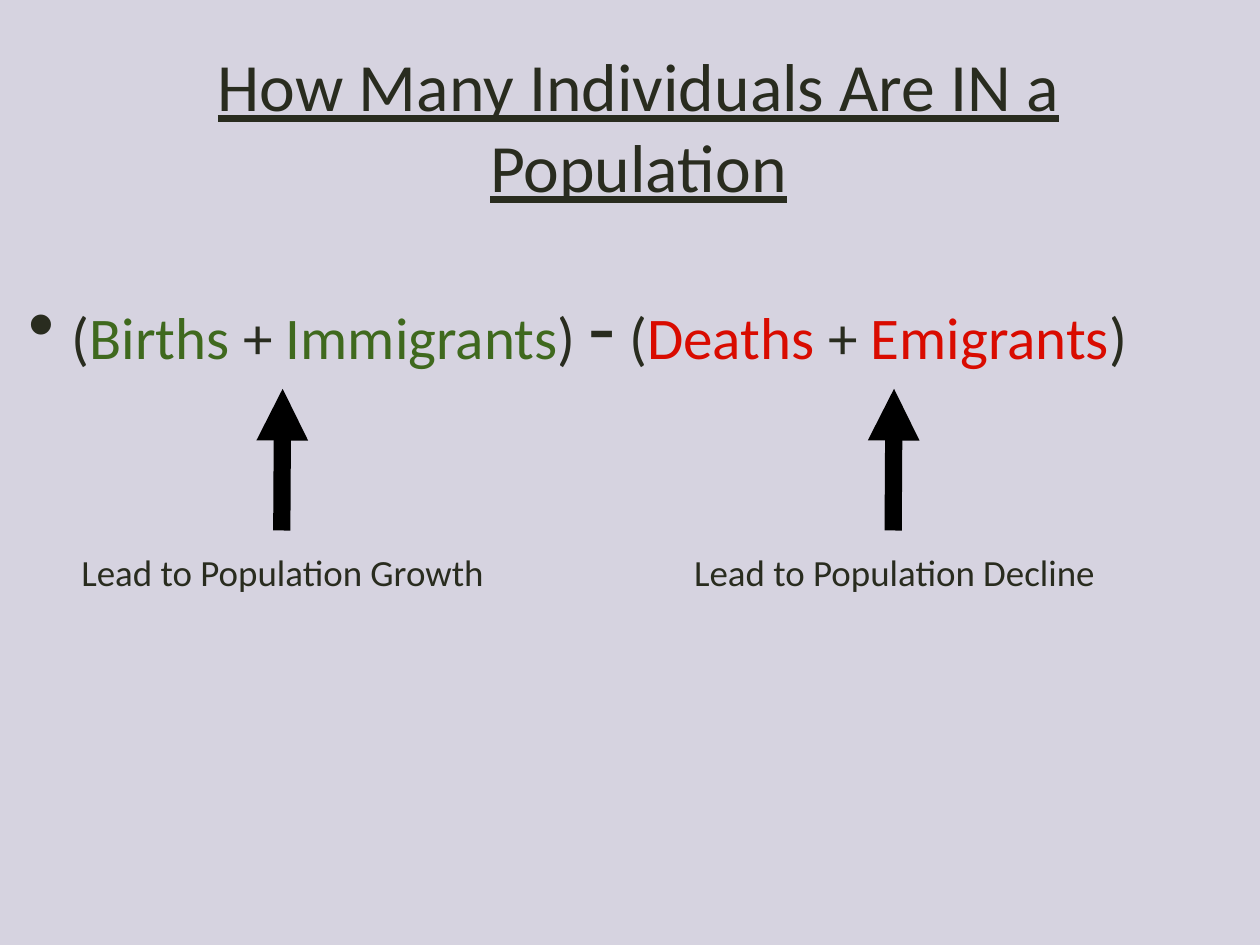
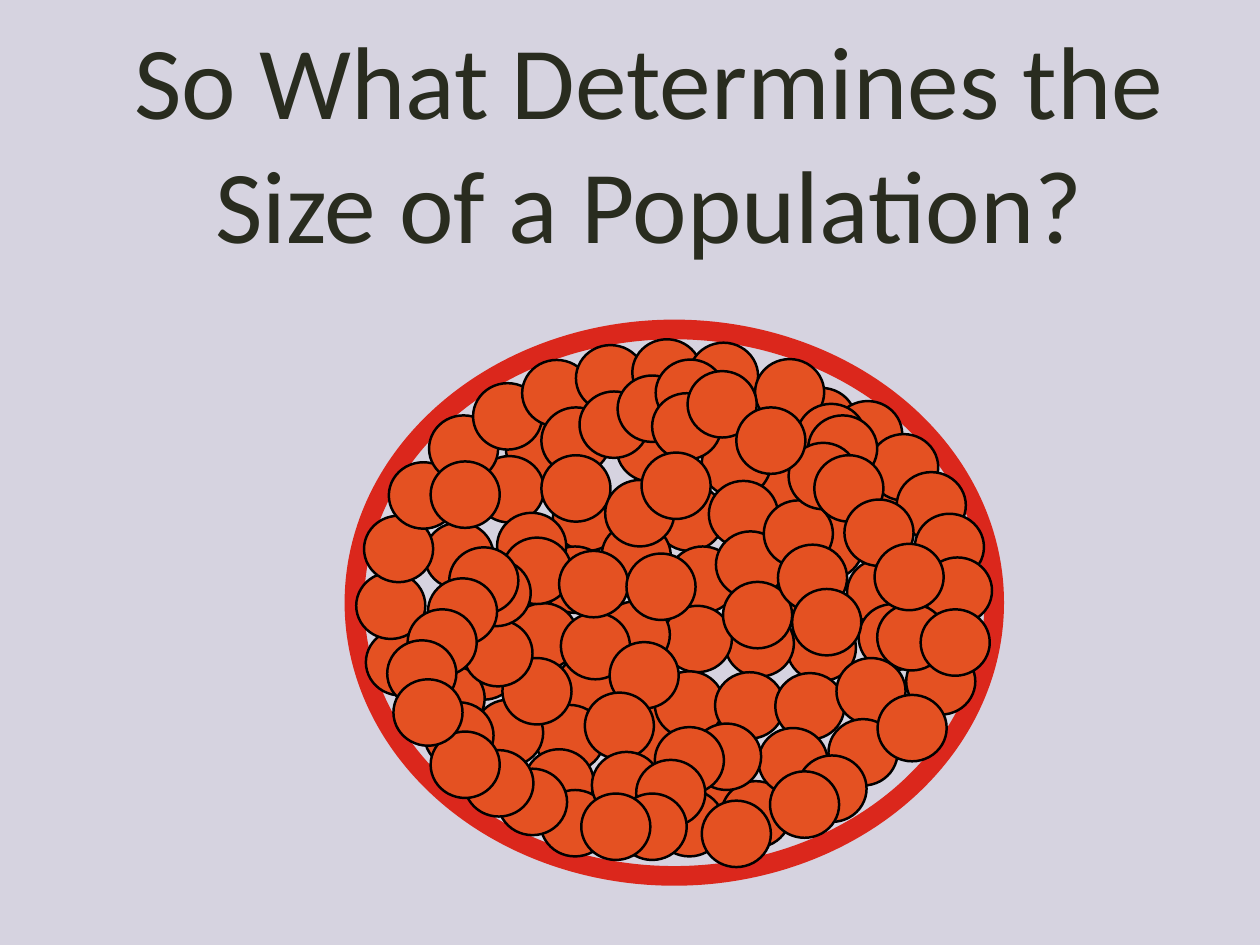
from math import cos, radians, sin
from typing import NamedTuple

from lxml import etree
from pptx import Presentation
from pptx.dml.color import RGBColor
from pptx.enum.shapes import MSO_CONNECTOR, MSO_SHAPE
from pptx.enum.text import MSO_ANCHOR, MSO_AUTO_SIZE, PP_ALIGN
from pptx.oxml.ns import qn
from pptx.util import Inches, Pt

STRAIGHT = MSO_CONNECTOR.STRAIGHT
OVAL = MSO_SHAPE.OVAL
MIDDLE, TOP = MSO_ANCHOR.MIDDLE, MSO_ANCHOR.TOP
NO_FIT, GROW = MSO_AUTO_SIZE.NONE, MSO_AUTO_SIZE.SHAPE_TO_FIT_TEXT
CENTER, LEFT = PP_ALIGN.CENTER, PP_ALIGN.LEFT

COLUMNS, ROWS = 14.22, 10.67  # one grid cell is one inch square
FONT = "Calibri"
COLORS = {
    "paper": "D6D3E0",
    "ink": "292C1F",
    "growth": "3F691E",
    "decline": "D90B00",
    "member": "E45122",
    "ring": "DB271C",
    "black": "000000",
}
TITLE_LAYOUT, LIST_LAYOUT = 5, 1

MEMBER_WIDTH, MEMBER_HEIGHT = 0.78, 0.75
RING_LEFT, RING_TOP, RING_WIDTH, RING_HEIGHT = 4, 3.72, 7.22, 6.17
RIM_RADIUS_ACROSS, RIM_RADIUS_DOWN = 3.2, 2.6


class Chain(NamedTuple):
    """Members in a straight line, each one step across and down from the last."""
    left: float
    top: float
    across: float = 0
    down: float = 0
    count: int = 1

    def places(self):
        for index in range(self.count):
            yield self.left + index * self.across, self.top + index * self.down


class RimArc(NamedTuple):
    """Members along the inside of the ring, in degrees clockwise from the right."""
    start: float
    step: float
    count: int

    def places(self):
        middle_left = RING_LEFT + (RING_WIDTH - MEMBER_WIDTH) / 2
        middle_top = RING_TOP + (RING_HEIGHT - MEMBER_HEIGHT) / 2
        for index in range(self.count):
            angle = radians(self.start + index * self.step)
            yield (middle_left + RIM_RADIUS_ACROSS * cos(angle),
                   middle_top + RIM_RADIUS_DOWN * sin(angle))


# Groups run from back to front.
BEHIND_RING = [
    Chain(7.39, 5.47, 1.08, -0.32, 2),
    Chain(7.92, 4.86, 0.96, -0.48, 2),
    Chain(9.56, 6.31, -1.01, -0.07, 3),
    Chain(6.24, 5.47),
    Chain(6.1, 6.17, 0.69, -0.27, 2),
    Chain(6.96, 4.69, -1.25, 0, 2),
    Chain(9.56, 5.15, -0.6, 0.64, 2),
    Chain(8.88, 6.94, -0.7, -0.05, 4),
    Chain(5.36, 5.15, -0.57, 0.75, 2),
    Chain(5.61, 5.79, -0.51, 0.86, 2),
    Chain(5.74, 6.81),
    Chain(6.28, 7.38, 0.7, 0.53, 3),
    Chain(7.39, 7.58, 0.68, 0.01, 3),
]
RIM = [
    RimArc(165, 14.25, 5),
    RimArc(234, 11.5, 5),
    RimArc(294, 19, 1),
    RimArc(313, 11, 5),
    RimArc(20, 13, 2),
]
UNDER_RIM = [
    Chain(6.04, 7.96, -0.12, 0.5, 2),
    Chain(5.07, 7.15, -0.38, 0.36, 2),
    Chain(5.35, 7.9, 0.32, -0.47, 2),
    Chain(6.33, 6.92),
    Chain(6.88, 7.25, -0.28, 0.57, 2),
    Chain(6.1, 8.92, 0.58, -0.43, 2),
    Chain(9.69, 6.82, -0.25, 0.61, 2),
    Chain(7.39, 8.92, 0.75, -0.1, 2),
    Chain(8.56, 8.22, 0.79, -0.1, 2),
]
OVER_RIM = [
    Chain(9.9, 6.82, 0.49, 0.06, 2),
    Chain(8.99, 4.56, 0.13, 0.13, 2),
    Chain(8, 5.43, 0.08, 0.57, 3),
    Chain(8.62, 5.65, 0.16, 0.5, 3),
    Chain(6.11, 4.6, 0.43, -0.18, 4),
    Chain(7.36, 4.44, 0.4, -0.25, 2),
    Chain(4.86, 5.21),
    Chain(6.11, 5.14, -0.44, 0.93, 4),
    Chain(5.21, 6.32, -0.14, -0.14, 2),
    Chain(6.31, 6.22, 0.76, 0.03, 2),
    Chain(6.83, 5.42, 0.41, -0.31, 2),
    Chain(7.81, 8.17),
    Chain(7.39, 8.21, -0.21, 0.37, 2),
    Chain(6.97, 8.96, -0.41, 0, 2),
    Chain(5.62, 8.68, -0.38, -0.21, 3),
    Chain(4.83, 6.53, -0.23, 0.35, 3),
    Chain(4.44, 7.67),
    Chain(8.9, 5),
    Chain(9.19, 5.14, 0.34, 0.5, 3),
    Chain(8.31, 4.6),
    Chain(9, 8.53, -0.31, 0.18, 2),
    Chain(7.92, 9.04),
]


def color(name):
    return RGBColor.from_string(COLORS[name])


def cells(*lengths):
    return [Inches(length) for length in lengths]


class Slides:
    """The deck's style and the slide being filled."""

    def __init__(self):
        self.deck = Presentation()
        self.deck.slide_width, self.deck.slide_height = cells(COLUMNS, ROWS)
        fill = self.deck.slide_master.background.fill
        fill.solid()
        fill.fore_color.rgb = color("paper")
        self.page = None

    def add_page(self, layout):
        self.page = self.deck.slides.add_slide(self.deck.slide_layouts[layout])

    def format_span(self, span, size, color_name="ink"):
        span.font.name = FONT
        span.font.size = Pt(size)
        span.font.color.rgb = color(color_name)

    def prepare(self, box, area, anchor, margin, fit=NO_FIT):
        """Place a text-holding shape and return its empty text frame."""
        box.left, box.top, box.width, box.height = cells(*area)
        frame = box.text_frame
        frame.auto_size = fit
        frame.vertical_anchor = anchor
        frame.margin_left = frame.margin_right = Inches(margin)
        frame.margin_top = frame.margin_bottom = Inches(margin)
        return frame

    def centered_line(self, frame, text, size):
        frame.text = text
        para = frame.paragraphs[0]
        para.alignment = CENTER
        self.format_span(para.runs[0], size)
        return para.runs[0]

    def title(self, text, area, size, underline=False):
        frame = self.prepare(self.page.shapes.title, area, MIDDLE, 0.06)
        self.centered_line(frame, text, size).font.underline = underline

    def bullet(self, spans, area):
        """Fill the body with one bullet made of (text, colour, size) spans."""
        frame = self.prepare(self.page.placeholders[1], area, TOP, 0.06)
        para = frame.paragraphs[0]
        para.alignment = LEFT
        para.space_before = Pt(0)
        properties = para._p.get_or_add_pPr()
        properties.set("marL", str(Inches(0.75)))
        properties.set("indent", str(Inches(-0.49)))
        etree.SubElement(properties, qn("a:buSzPct"), val="125000")
        etree.SubElement(properties, qn("a:buChar"), char="•")
        for text, color_name, size in spans:
            span = para.add_run()
            span.text = text
            self.format_span(span, size, color_name)

    def label(self, text, area):
        box = self.page.shapes.add_textbox(*cells(*area))
        frame = self.prepare(box, area, MIDDLE, 0, GROW)
        frame.word_wrap = False
        self.centered_line(frame, text, 30)

    def up_arrow(self, column, top, bottom):
        arrow = self.page.shapes.add_connector(
            STRAIGHT, *cells(column, top, column - 0.01, bottom))
        arrow.line.color.rgb = color("black")
        arrow.line.width = Pt(14)
        etree.SubElement(arrow.line._get_or_add_ln(), qn("a:headEnd"), type="triangle")
        etree.SubElement(arrow._element.spPr, qn("a:effectLst"))

    def oval(self, area, line, width, fill=None):
        shape = self.page.shapes.add_shape(OVAL, *cells(*area))
        shape.shadow.inherit = False
        if fill:
            shape.fill.solid()
            shape.fill.fore_color.rgb = color(fill)
        else:
            shape.fill.background()
        shape.line.color.rgb = color(line)
        shape.line.width = Pt(width)

    def members(self, groups):
        for group in groups:
            for left, top in group.places():
                self.oval((left, top, MEMBER_WIDTH, MEMBER_HEIGHT), "black", 2, "member")


def formula_side(first, second, color_name):
    """Spans for a bracketed sum of two coloured words."""
    return [("(", "ink", 48), (first, color_name, 48), (" + ", "ink", 48),
            (second, color_name, 48), (")", "ink", 48)]


def add_growth_formula(slides):
    slides.add_page(LIST_LAYOUT)
    slides.title("How Many Individuals Are IN a Population",
                 (1.97, 0, 10.47, 2.83), 55, underline=True)
    space = ("\u0020", "ink", 48)
    slides.bullet(
        formula_side("Births", "Immigrants", "growth")
        + [space, ("-", "ink", 72), space]
        + formula_side("Deaths", "Emigrants", "decline"),
        (0, 3, 13.49, 6.39))
    for outcome, arrow_column, left, width in (
            ("Growth", 3.19, 0.76, 4.86), ("Decline", 10.09, 7.64, 4.91)):
        slides.up_arrow(arrow_column, 4.39, 5.99)
        slides.label(f"Lead to Population {outcome}", (left, 6.21, width, 0.5))


def add_crowded_population(slides):
    slides.add_page(TITLE_LAYOUT)
    slides.title("So What Determines the Size of a Population?",
                 (0.93, 0.17, 12.79, 2.83), 84)
    slides.members(BEHIND_RING)
    slides.oval((RING_LEFT, RING_TOP, RING_WIDTH, RING_HEIGHT), "ring", 16)
    slides.members(UNDER_RIM + RIM + OVER_RIM)


def main():
    slides = Slides()
    add_growth_formula(slides)
    add_crowded_population(slides)
    slides.deck.save("out.pptx")


if __name__ == "__main__":
    main()
